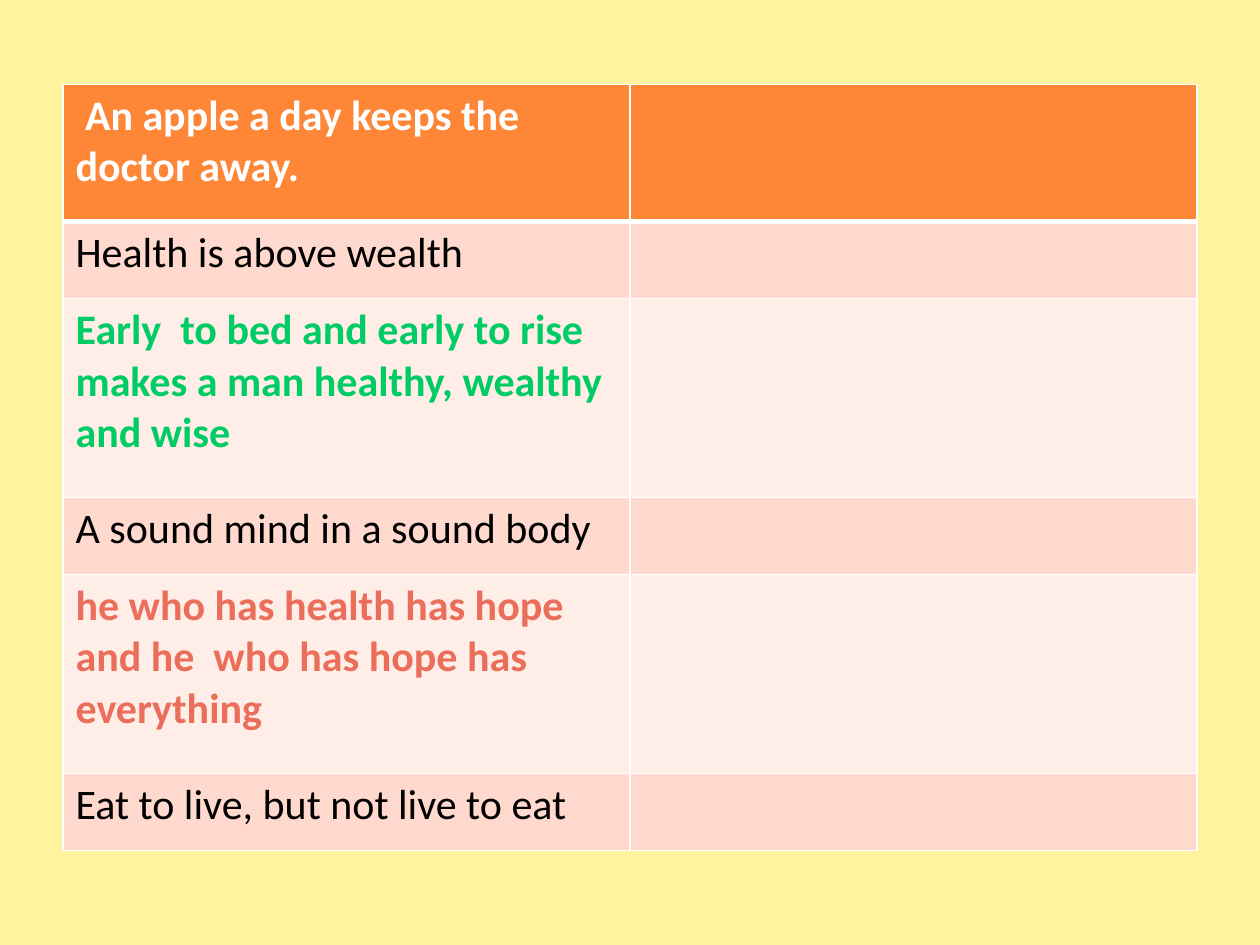
from lxml import etree
from pptx import Presentation
from pptx.dml.color import RGBColor
from pptx.oxml.ns import qn
from pptx.util import Inches, Pt

WHITE, BLACK = "FFFFFF", "000000"
HEAD, DARK, LIGHT = "FE8637", "FFD9CE", "FFEDE8"

# text, text colour, bold, row height
ROWS = [
    (" An apple a day keeps the doctor away.", WHITE, True, 1.09),
    ("Health is above wealth", BLACK, False, 0.61),
    ("Early  to bed and early to rise makes a man healthy, wealthy and wise",
     "00CC66", True, 1.58),
    ("A sound mind in a sound body", BLACK, False, 0.61),
    ("he who has health has hope and he  who has hope has everything",
     "EB6E5A", True, 1.58),
    ("Eat to live, but not live to eat", BLACK, False, 0.61),
]


def paint(fill, color):
    fill.solid()
    fill.fore_color.rgb = RGBColor.from_string(color)


def add_borders(cell, widths):
    """Draw white borders; widths maps L, R, T and B to points."""
    props = cell._tc.get_or_add_tcPr()
    for side, width in widths.items():
        line = etree.SubElement(props, qn(f"a:ln{side}"), w=str(Pt(width)))
        solid = etree.SubElement(line, qn("a:solidFill"))
        etree.SubElement(solid, qn("a:srgbClr"), val=WHITE)


def write(cell, text, color, bold):
    cell.text = text
    font = cell.text_frame.paragraphs[0].runs[0].font
    for name, value in {"name": "Calibri", "size": Pt(24), "bold": bold}.items():
        setattr(font, name, value)
    font.color.rgb = RGBColor.from_string(color)


def add_proverbs(slide, left, top, width, height):
    table = slide.shapes.add_table(len(ROWS), 2, left, top, width, height).table
    for column in table.columns:
        column.width = width // 2
    for i, (text, color, bold, tall) in enumerate(ROWS):
        table.rows[i].height = Inches(tall)
        band = HEAD if i == 0 else DARK if i % 2 else LIGHT
        widths = {"L": 1, "R": 1, "T": 3 if i == 1 else 1, "B": 3 if i == 0 else 1}
        for cell in table.rows[i].cells:
            add_borders(cell, widths)
            paint(cell.fill, band)
        write(table.cell(i, 0), text, color, bold)


def main():
    deck = Presentation()
    deck.slide_width, deck.slide_height = Inches(10), Inches(7.5)
    slide = deck.slides.add_slide(deck.slide_layouts[6])
    paint(slide.background.fill, "FFF39D")
    add_proverbs(slide, Inches(0.5), Inches(0.67), Inches(9), Inches(6.08))
    deck.save("out.pptx")


if __name__ == "__main__":
    main()
